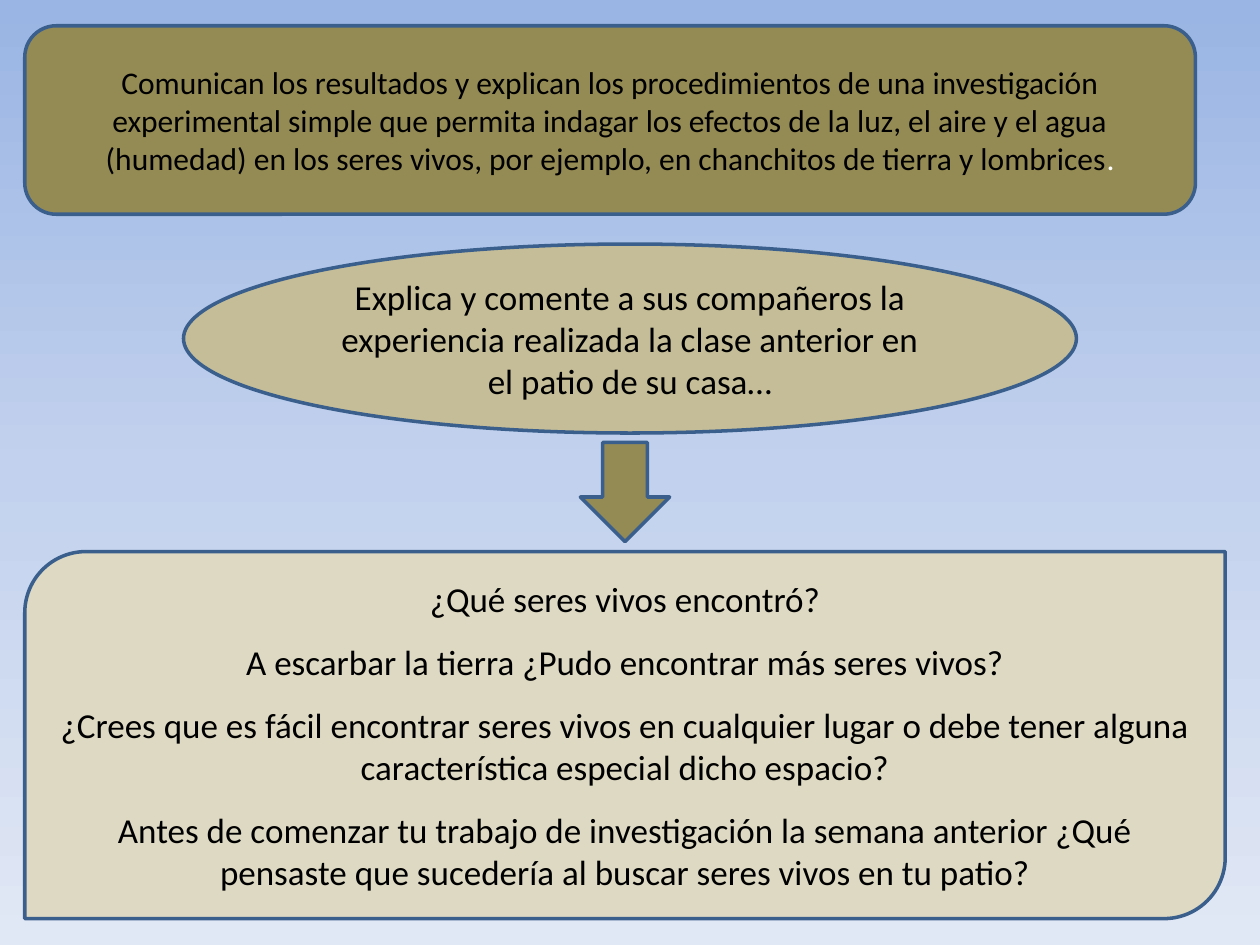
from copy import deepcopy

from pptx import Presentation
from pptx.dml.color import RGBColor
from pptx.enum.shapes import MSO_SHAPE
from pptx.enum.text import MSO_ANCHOR, PP_ALIGN
from pptx.oxml.ns import qn
from pptx.util import Cm, Pt

OVAL = MSO_SHAPE.OVAL
ARROW = MSO_SHAPE.DOWN_ARROW
ROUND = MSO_SHAPE.ROUNDED_RECTANGLE
LEAF = MSO_SHAPE.ROUND_2_DIAG_RECTANGLE
MIDDLE = MSO_ANCHOR.MIDDLE
CENTER = PP_ALIGN.CENTER

COLORS = {
    "olive": "948A54",
    "sand": "C4BD97",
    "cream": "DDD9C3",
    "edge": "3A5F8C",
    "black": "000000",
    "white": "FFFFFF",
}
SKY = [(0, "9AB5E4"), (0.5, "C2D1ED"), (1, "E1E8F5")]

GOAL = (
    "Comunican los resultados y explican los procedimientos de una investigación "
    "experimental simple que permita indagar los efectos de la luz, el aire y el agua "
    "(humedad) en los seres vivos, por ejemplo, en chanchitos de tierra y lombrices"
)
TASK = (
    "Explica y comente a sus compañeros la experiencia realizada la clase anterior "
    "en el patio de su casa…"
)
ASKS = [
    "¿Qué seres vivos encontró?",
    "A escarbar la tierra ¿Pudo encontrar más seres vivos?",
    "¿Crees que es fácil encontrar seres vivos en cualquier lugar o debe tener alguna "
    "característica especial dicho espacio?",
    "Antes de comenzar tu trabajo de investigación la semana anterior ¿Qué pensaste "
    "que sucedería al buscar seres vivos en tu patio?",
]


def tint(name):
    """Return the named colour."""
    return RGBColor.from_string(COLORS[name])


def paint_sky(slide):
    """Fill the background with a vertical three-stop gradient."""
    fill = slide.background.fill
    fill.gradient()
    fill.gradient_angle = 270
    stops = next(slide.background._cSld.iter(qn("a:gsLst")))
    stops.insert(1, deepcopy(stops[0]))
    for stop, (place, color) in zip(fill.gradient_stops, SKY):
        stop.position = place
        stop.color.rgb = RGBColor.from_string(color)


def add_form(slide, kind, box, color):
    """Add a filled, outlined shape; box is in centimetres."""
    form = slide.shapes.add_shape(kind, *map(Cm, box))
    form.shadow.inherit = False
    form.fill.solid()
    form.fill.fore_color.rgb = tint(color)
    form.line.color.rgb = tint("edge")
    form.line.width = Pt(2)
    return form


def add_text(form, lines, size=20, gap=12):
    """Write centred paragraphs into a shape and return the last one."""
    frame = form.text_frame
    frame.word_wrap = True
    frame.vertical_anchor = MIDDLE
    for i, line in enumerate(lines):
        para = frame.add_paragraph() if i else frame.paragraphs[0]
        para.text = line
        para.alignment = CENTER
        if i:
            para.space_before = Pt(gap)
        para.font.size = Pt(size)
        para.font.name = "Calibri"
        para.font.color.rgb = tint("black")
    return para


def main():
    """Build and save the slide."""
    deck = Presentation()
    deck.slide_width, deck.slide_height = Cm(25.4), Cm(19.05)
    slide = deck.slides.add_slide(deck.slide_layouts[6])
    paint_sky(slide)

    add_text(add_form(slide, OVAL, (3.7, 4.92, 18, 3.81), "sand"), [TASK])
    add_form(slide, ARROW, (11.7, 8.92, 1.8, 2), "olive")
    add_text(add_form(slide, LEAF, (0.5, 11.12, 24.2, 7.4), "cream"), ASKS)
    goal = add_form(slide, ROUND, (0.5, 0.52, 23.6, 3.8), "olive")
    dot = add_text(goal, [GOAL], size=18).add_run()
    dot.text = "."
    dot.font.color.rgb = tint("white")

    deck.save("out.pptx")


if __name__ == "__main__":
    main()
